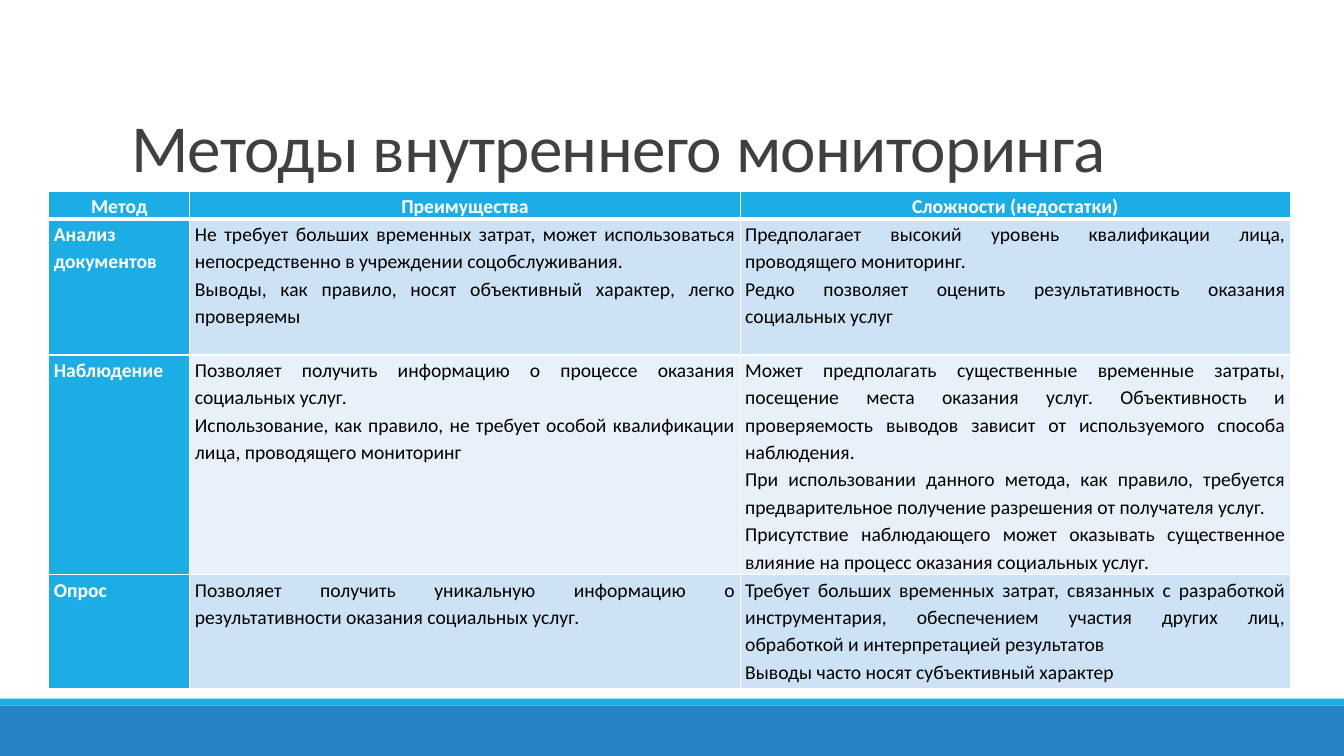
from lxml import etree
from pptx import Presentation
from pptx import util as u
from pptx.dml import color
from pptx.enum import shapes, text
from pptx.oxml import ns

Pt = u.Pt
FONT = "Calibri"
HUES = {
    "blue": "2683C6", "cyan": "1CADE4", "gray": "808080", "dark": "404040",
    "white": "FFFFFF", "black": "000000", "band": "CDE3F5", "pale": "E8F1FA",
}
HEADS = ["Метод", "Преимущества", "Сложности (недостатки)"]
ROWS = [
    ("Анализ документов",
     ["Не требует больших временных затрат, может использоваться непосредственно в учреждении соцобслуживания.",
      "Выводы, как правило, носят объективный характер, легко проверяемы"],
     ["Предполагает высокий уровень квалификации лица, проводящего мониторинг.",
      "Редко позволяет оценить результативность оказания социальных услуг"]),
    ("Наблюдение",
     ["Позволяет получить информацию о процессе оказания социальных услуг.",
      "Использование, как правило, не требует особой квалификации лица, проводящего мониторинг"],
     ["Может предполагать существенные временные затраты, посещение места оказания услуг. "
      "Объективность и проверяемость выводов зависит от используемого способа наблюдения.",
      "При использовании данного метода, как правило, требуется предварительное получение "
      "разрешения от получателя услуг.",
      "Присутствие наблюдающего может оказывать существенное влияние на процесс оказания социальных услуг."]),
    ("Опрос",
     ["Позволяет получить уникальную информацию о результативности оказания социальных услуг."],
     ["Требует больших временных затрат, связанных с разработкой инструментария, "
      "обеспечением участия других лиц, обработкой и интерпретацией результатов",
      "Выводы часто носят субъективный характер"]),
]
COLS = [100.8, 393.1, 393.1]
TALL = [19.4, 97.2, 157, 81.4]


def rgb(name):
    """Return the named colour."""
    return color.RGBColor.from_string(HUES[name])


def add_run(para, words, size, hue, bold=False):
    """Add one formatted run to a paragraph."""
    run = para.add_run()
    run.text = words
    font = run.font
    font.name, font.size, font.bold = FONT, Pt(size), bold
    font.color.rgb = rgb(hue)
    return run


def add_bar(slide, box, hue):
    """Draw a plain filled bar in the box."""
    bar = slide.shapes.add_shape(shapes.MSO_SHAPE.RECTANGLE, *map(Pt, box))
    bar.shadow.inherit = False
    bar.fill.solid()
    bar.fill.fore_color.rgb = rgb(hue)
    bar.line.fill.background()


def add_base(slide, box):
    """Draw the footer: a thin strip above a wide band."""
    left, top, wide, high = box
    strip = 5
    add_bar(slide, (left, top + strip, wide, high - strip), "blue")
    add_bar(slide, (left, top, wide, strip), "cyan")


def add_title(slide, box):
    """Place the title and the rule under it."""
    left, top, wide, high = box
    title = slide.shapes.title
    title.left, title.top, title.width, title.height = map(Pt, box)
    frame = title.text_frame
    frame.word_wrap = True
    frame.auto_size = text.MSO_AUTO_SIZE.NONE
    frame.vertical_anchor = text.MSO_ANCHOR.BOTTOM
    para = frame.paragraphs[0]
    para.alignment = text.PP_ALIGN.LEFT
    para.line_spacing = 0.85
    run = add_run(para, "Методы внутреннего мониторинга", 48, "dark")
    run.font._element.set("spc", "-50")
    base = top + high
    rule = slide.shapes.add_connector(
        shapes.MSO_CONNECTOR.STRAIGHT,
        Pt(left + 8), Pt(base), Pt(left + wide), Pt(base))
    rule.line.color.rgb = rgb("gray")
    rule.line.width = Pt(0.5)
    etree.SubElement(rule._element.spPr, ns.qn("a:effectLst"))


def add_edges(cell, head):
    """Give a cell white borders, thicker around the header's base."""
    props = cell._tc.get_or_add_tcPr()
    for side in ("lnL", "lnR", "lnT", "lnB"):
        width = 3 if head and side == "lnB" else 1
        edge = etree.SubElement(props, ns.qn("a:" + side), w=str(Pt(width)))
        fill = etree.SubElement(edge, ns.qn("a:solidFill"))
        etree.SubElement(fill, ns.qn("a:srgbClr"), val=HUES["white"])


def fill_cell(cell, lines, fill, head, bold):
    """Write the paragraphs of a cell and colour it."""
    cell.margin_left = cell.margin_right = Pt(3.6)
    cell.margin_top = cell.margin_bottom = Pt(0)
    add_edges(cell, head)
    cell.fill.solid()
    cell.fill.fore_color.rgb = rgb(fill)
    frame = cell.text_frame
    for i, words in enumerate(lines):
        para = frame.add_paragraph() if i else frame.paragraphs[0]
        para.alignment = text.PP_ALIGN.CENTER if head else text.PP_ALIGN.JUSTIFY
        para.line_spacing = 1.15
        add_run(para, words, 14, "white" if bold else "black", bold)


def add_grid(slide, left, top):
    """Build the table of methods from its top left corner."""
    table = slide.shapes.add_table(
        len(TALL), len(COLS), Pt(left), Pt(top), Pt(sum(COLS)), Pt(sum(TALL))).table
    for col, wide in zip(table.columns, COLS):
        col.width = Pt(wide)
    for row, high in zip(table.rows, TALL):
        row.height = Pt(high)
    for c, words in enumerate(HEADS):
        fill_cell(table.cell(0, c), [words], "cyan", True, True)
    for r, (name, pros, cons) in enumerate(ROWS, 1):
        fill_cell(table.cell(r, 0), [name], "cyan", False, True)
        for c, lines in enumerate((pros, cons), 1):
            fill_cell(table.cell(r, c), lines, "band" if r % 2 else "pale", False, False)


def main():
    """Build and save the slide."""
    deck = Presentation()
    deck.slide_width, deck.slide_height = Pt(960), Pt(540)
    slide = deck.slides.add_slide(deck.slide_layouts[5])
    add_base(slide, (0, 499, 960, 41))
    add_title(slide, (86.4, 22.5, 792, 114.3))
    add_grid(slide, 34.8, 136.8)
    deck.save("out.pptx")


if __name__ == "__main__":
    main()
